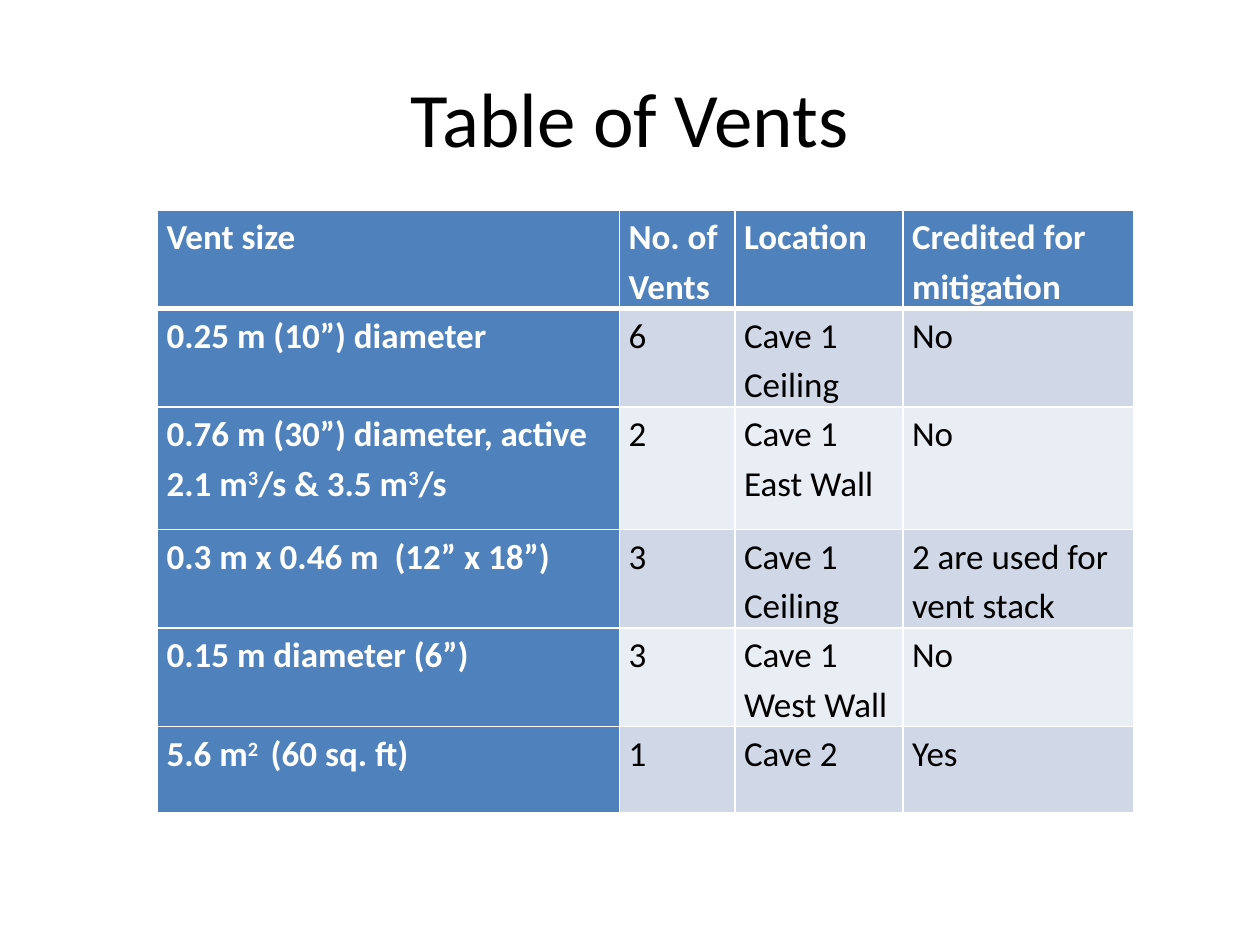
from lxml import etree
from pptx import Presentation
from pptx.dml.color import RGBColor
from pptx.enum.text import MSO_ANCHOR, PP_ALIGN
from pptx.oxml.ns import qn
from pptx.util import Pt

CENTER, MIDDLE, TOP = PP_ALIGN.CENTER, MSO_ANCHOR.MIDDLE, MSO_ANCHOR.TOP

# Content: ^ encloses superscript, a line break starts a new paragraph
TITLE = "Table of Vents"
VENTS = [
    ("Vent size", "No. of  Vents", "Location", "Credited for mitigation"),
    ("0.25 m (10”) diameter", "6", "Cave 1 Ceiling", "No"),
    ("0.76 m (30”) diameter, active\n2.1 m^3^/s & 3.5 m^3^/s", "2", "Cave 1 East Wall", "No"),
    ("0.3 m x 0.46 m  (12” x 18”)", "3", "Cave 1 Ceiling", "2 are used for vent stack"),
    ("0.15 m diameter (6”)", "3", "Cave 1 West Wall", "No"),
    ("5.6 m^2 ^ (60 sq. ft)", "1", "Cave 2", "Yes"),
]

# Layout and style
COLUMN_WIDTHS = [264, 66, 96, 132]
ROW_HEIGHTS = [49, 49, 70, 49, 49, 49]
FONT = "Calibri"
WHITE = RGBColor(0xFF, 0xFF, 0xFF)
BLACK = RGBColor(0x00, 0x00, 0x00)
BLUE = RGBColor(0x4F, 0x81, 0xBD)
BANDS = [RGBColor(0xE9, 0xED, 0xF4), RGBColor(0xD0, 0xD8, 0xE8)]


def set_font(paragraph, size, color, bold=False):
    font = paragraph.font
    font.name, font.size, font.bold = FONT, Pt(size), bold
    font.color.rgb = color


def add_border(cell, side, width):
    line = etree.SubElement(cell._tc.get_or_add_tcPr(), qn(f"a:ln{side}"), w=str(Pt(width)))
    fill = etree.SubElement(line, qn("a:solidFill"))
    etree.SubElement(fill, qn("a:srgbClr"), val=str(WHITE))


def write_cell(cell, text, color, bold):
    frame = cell.text_frame
    for index, line in enumerate(text.split("\n")):
        paragraph = frame.add_paragraph() if index else frame.paragraphs[0]
        paragraph.line_spacing = 1.15
        set_font(paragraph, 20, color, bold)
        for part, words in enumerate(line.split("^")):
            run = paragraph.add_run()
            run.text = words
            if part % 2:
                run.font._element.set("baseline", "30000")


def main():
    deck = Presentation()
    deck.slide_width, deck.slide_height = Pt(720), Pt(540)
    slide = deck.slides.add_slide(deck.slide_layouts[5])

    # Title
    title = slide.shapes.title
    title.left, title.top, title.width, title.height = Pt(36), Pt(21.6), Pt(648), Pt(90)
    title.text_frame.text = TITLE
    title.text_frame.vertical_anchor = MIDDLE
    heading = title.text_frame.paragraphs[0]
    heading.alignment = CENTER
    set_font(heading, 44, BLACK)

    # Table grid
    table = slide.shapes.add_table(
        len(VENTS), len(COLUMN_WIDTHS), Pt(90), Pt(120),
        Pt(sum(COLUMN_WIDTHS)), Pt(sum(ROW_HEIGHTS))).table
    table.first_col = True
    for column, width in zip(table.columns, COLUMN_WIDTHS):
        column.width = Pt(width)
    for row, height in zip(table.rows, ROW_HEIGHTS):
        row.height = Pt(height)

    # Cells: blue header row and first column, banded body
    for r, vent in enumerate(VENTS):
        for c, text in enumerate(vent):
            cell = table.cell(r, c)
            is_heading = r == 0 or c == 0
            cell.margin_left = cell.margin_right = Pt(5.2)
            cell.margin_top = cell.margin_bottom = Pt(0)
            cell.vertical_anchor = TOP
            borders = {"L": 1, "R": 1, "T": 3 if r == 1 else 1, "B": 3 if r == 0 else 1}
            for side, width in borders.items():
                add_border(cell, side, width)
            cell.fill.solid()
            cell.fill.fore_color.rgb = BLUE if is_heading else BANDS[r % 2]
            write_cell(cell, text, WHITE if is_heading else BLACK, is_heading)

    deck.save("out.pptx")


if __name__ == "__main__":
    main()
